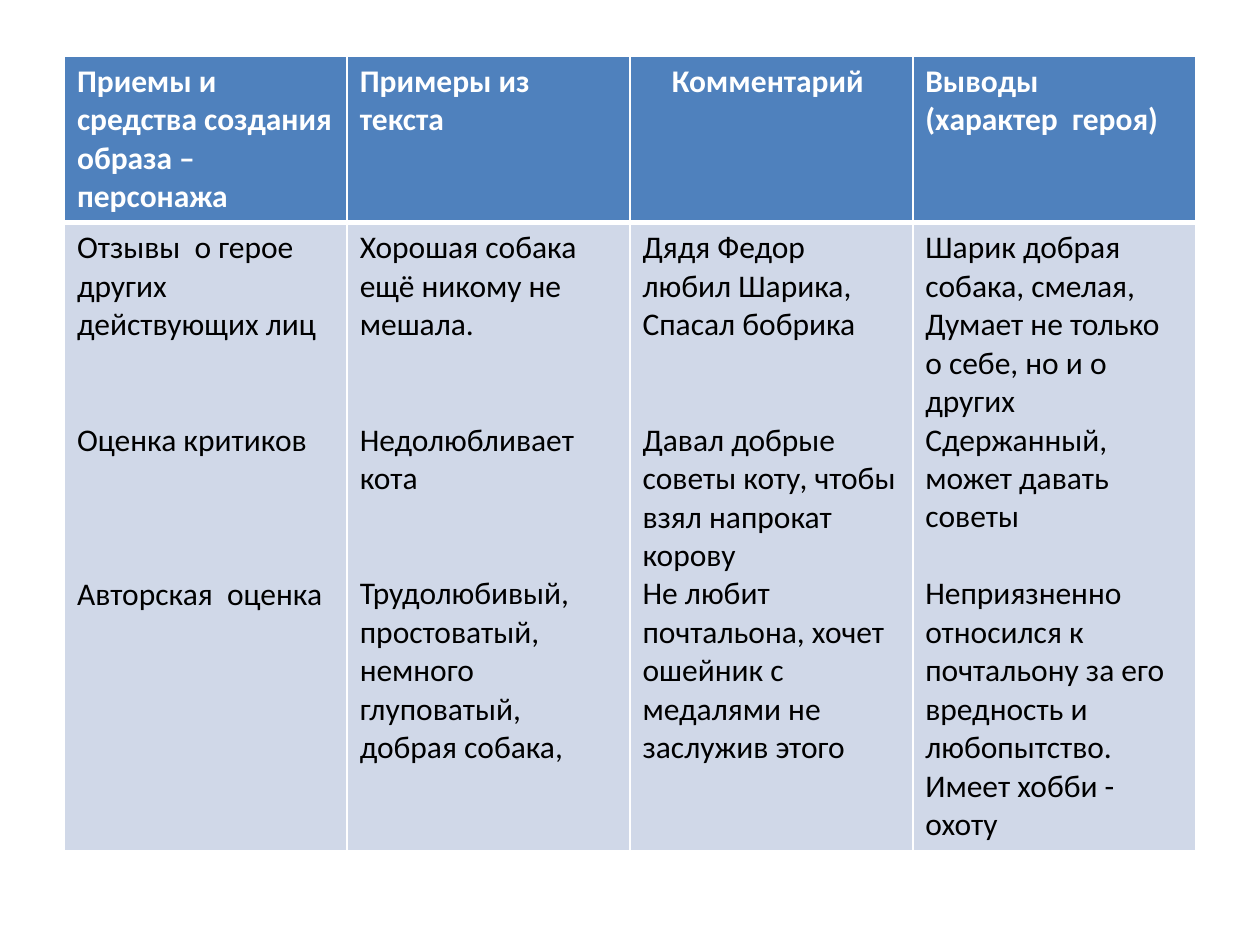
from dataclasses import dataclass

from lxml.etree import SubElement
from pptx import Presentation
from pptx.dml.color import RGBColor
from pptx.enum.text import PP_ALIGN as Align
from pptx.oxml.ns import qn
from pptx.util import Cm, Pt


@dataclass(frozen=True)
class Theme:
    font: str = "Calibri"
    size: int = 18
    line_height: int = 22
    header_fill: str = "4F81BD"
    header_text: str = "FFFFFF"
    body_fill: str = "D0D8E8"
    body_text: str = "000000"
    border: str = "FFFFFF"
    thin: int = 1
    thick: int = 3


@dataclass(frozen=True)
class Entry:
    """A paragraph and the number of empty lines above it."""
    text: str
    gap: int = 0


@dataclass(frozen=True)
class Column:
    header: str
    entries: tuple[Entry, ...]
    header_align: Align = Align.LEFT


THEME = Theme()
COLUMN_WIDTH = Cm(5.7)
HEADER_HEIGHT, BODY_HEIGHT = Cm(3.35), Cm(12.65)

COLUMNS = (
    Column("Приемы и средства создания образа – персонажа", (
        Entry("Отзывы  о герое других  действующих лиц"),
        Entry("Оценка критиков", 2),
        Entry("Авторская  оценка", 3),
    )),
    Column("Примеры из  текста", (
        Entry("Хорошая собака ещё никому не мешала."),
        Entry("Недолюбливает кота", 2),
        Entry("Трудолюбивый, простоватый, немного глуповатый, добрая собака,", 2),
    )),
    Column("Комментарий ", (
        Entry("Дядя Федор любил Шарика,"),
        Entry("Спасал бобрика"),
        Entry("Давал добрые советы коту, чтобы взял напрокат  корову", 2),
        Entry("Не любит почтальона, хочет ошейник с медалями не заслужив этого"),
    ), Align.CENTER),
    Column("Выводы  (характер  героя)", (
        Entry("Шарик добрая собака, смелая,"),
        Entry("Думает не только о себе, но и о других"),
        Entry("Сдержанный, может давать советы"),
        Entry("Неприязненно относился к почтальону за его вредность и "
              "любопытство. Имеет хобби - охоту", 1),
    )),
)


def set_borders(cell, top: int, bottom: int) -> None:
    properties = cell._tc.get_or_add_tcPr()
    widths = {"L": THEME.thin, "R": THEME.thin, "T": top, "B": bottom}
    for position, (side, width) in enumerate(widths.items()):
        line = SubElement(properties, qn(f"a:ln{side}"), w=str(Pt(width)))
        fill = SubElement(line, qn("a:solidFill"))
        SubElement(fill, qn("a:srgbClr"), val=THEME.border)
        properties.insert(position, line)  # borders come before the fill


def fill_cell(cell, entries: tuple[Entry, ...], fill: str, color: str,
              bold: bool = False, align: Align = Align.LEFT) -> None:
    cell.fill.solid()
    cell.fill.fore_color.rgb = RGBColor.from_string(fill)
    frame = cell.text_frame
    for index, entry in enumerate(entries):
        paragraph = frame.add_paragraph() if index else frame.paragraphs[0]
        paragraph.text = entry.text
        paragraph.alignment = align
        if entry.gap:
            paragraph.space_before = Pt(entry.gap * THEME.line_height)
        font = paragraph.font
        font.name, font.size, font.bold = THEME.font, Pt(THEME.size), bold
        font.color.rgb = RGBColor.from_string(color)


def add_character_table(slide) -> None:
    table = slide.shapes.add_table(
        2, len(COLUMNS), Cm(1.3), Cm(1.13),
        COLUMN_WIDTH * len(COLUMNS), HEADER_HEIGHT + BODY_HEIGHT).table
    table.horz_banding = False
    table.rows[0].height, table.rows[1].height = HEADER_HEIGHT, BODY_HEIGHT
    for index, column in enumerate(COLUMNS):
        table.columns[index].width = COLUMN_WIDTH
        header, body = table.cell(0, index), table.cell(1, index)
        fill_cell(header, (Entry(column.header),), THEME.header_fill,
                  THEME.header_text, True, column.header_align)
        fill_cell(body, column.entries, THEME.body_fill, THEME.body_text)
        set_borders(header, THEME.thin, THEME.thick)
        set_borders(body, THEME.thick, THEME.thin)


def main() -> None:
    presentation = Presentation()
    presentation.slide_width, presentation.slide_height = Cm(25.4), Cm(19.05)
    slide = presentation.slides.add_slide(presentation.slide_layouts[6])
    add_character_table(slide)
    presentation.save("out.pptx")


if __name__ == "__main__":
    main()
